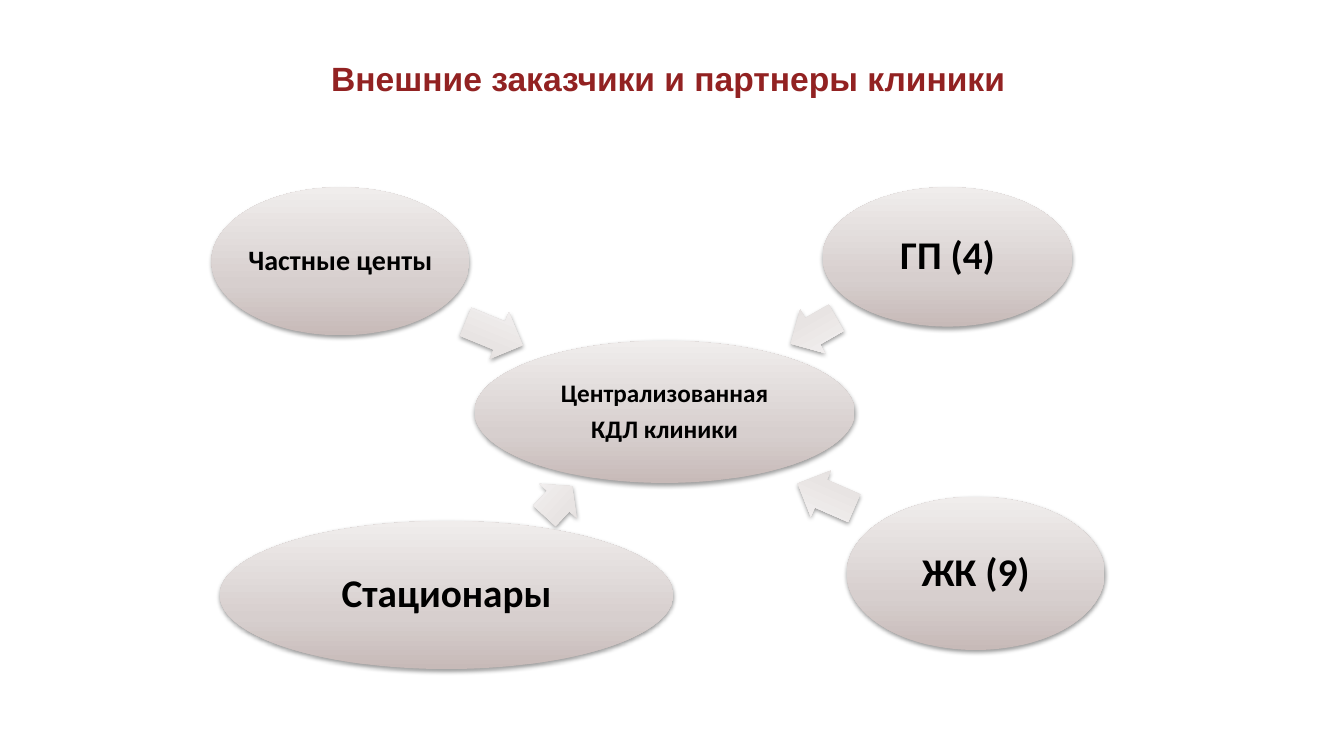
"""Builds a slide of external clients and partners around a central laboratory."""
from copy import deepcopy
from dataclasses import dataclass

from lxml import etree
from pptx import Presentation
from pptx.dml.color import RGBColor
from pptx.enum.shapes import MSO_SHAPE
from pptx.enum.text import MSO_ANCHOR, PP_ALIGN
from pptx.oxml.ns import qn
from pptx.util import Cm, Pt

OVAL_STOPS = ("C7BAB8", "D7CFCE", "F0EDEC")
ARROW_STOPS = ("E0D9D8", "E8E4E3", "F6F4F4")
STOP_POSITIONS = (0, 0.35, 1)
ARROW_HEIGHT = 1.27


@dataclass
class Oval:
    """An ellipse with its text, in centimetres and points."""
    text: str
    x: float
    y: float
    w: float
    h: float
    size: int = 28


@dataclass
class Arrow:
    """A block arrow towards the centre, in centimetres and degrees."""
    x: float
    y: float
    w: float
    angle: float


OVALS = (
    Oval("Централизованная\nКДЛ клиники", 11.96, 8.59, 9.58, 3.58, 18),
    Oval("ГП (4)", 20.73, 4.72, 6.3, 3.51),
    Oval("ЖК (9)", 21.34, 12.52, 6.5, 3.86),
    Oval("Стационары", 5.54, 13.13, 11.43, 3.73),
    Oval("Частные центы", 5.33, 4.72, 6.5, 3.73, 20),
)
ARROWS = (
    Arrow(19.84, 7.7, 1.32, 150.4),
    Arrow(20.04, 11.86, 1.55, 203.6),
    Arrow(13.56, 11.99, 1.02, 312.8),
    Arrow(11.68, 7.77, 1.55, 22.3),
)


def rgb(color: str) -> RGBColor:
    """Returns the colour of a hex string."""
    return RGBColor.from_string(color)


def write(sp, text: str, *, size: int, font: str, color: str = "000000",
          spacing: float = 1, after: float = 0, wrap: bool = False) -> None:
    """Writes bold centred text, one paragraph a line."""
    tf = sp.text_frame
    tf.word_wrap = wrap
    tf.vertical_anchor = MSO_ANCHOR.MIDDLE
    tf.margin_left = tf.margin_right = tf.margin_top = tf.margin_bottom = Cm(0.1)
    for i, line in enumerate(text.split("\n")):
        p = tf.add_paragraph() if i else tf.paragraphs[0]
        p.alignment = PP_ALIGN.CENTER
        p.line_spacing = spacing
        p.space_after = Pt(after)
        r = p.add_run()
        r.text = line
        r.font.name, r.font.size, r.font.bold = font, Pt(size), True
        r.font.color.rgb = rgb(color)


def add_shadow(sp) -> None:
    """Adds a soft shadow below the shape."""
    sp.shadow.inherit = False
    effects = sp._element.spPr.find(qn("a:effectLst"))
    shadow = etree.SubElement(effects, qn("a:outerShdw"), blurRad="40000",
                              dist="20000", dir="5400000", rotWithShape="0")
    black = etree.SubElement(shadow, qn("a:srgbClr"), val="000000")
    etree.SubElement(black, qn("a:alpha"), val="38000")


def add_gradient_shape(s, kind: MSO_SHAPE, x: float, y: float, w: float,
                       h: float, stops: tuple[str, ...]):
    """Adds a shape that gets lighter towards its top."""
    sp = s.shapes.add_shape(kind, Cm(x), Cm(y), Cm(w), Cm(h))
    sp.fill.gradient()
    sp.fill.gradient_angle = 90
    gs_list = next(sp._element.spPr.iter(qn("a:gsLst")))
    gs_list.append(deepcopy(gs_list[0]))
    for stop, position, color in zip(sp.fill.gradient_stops, STOP_POSITIONS, stops):
        stop.position = position
        stop.color.rgb = rgb(color)
    sp.line.fill.background()
    add_shadow(sp)
    return sp


def add_oval(s, oval: Oval) -> None:
    """Draws an ellipse with its text."""
    sp = add_gradient_shape(s, MSO_SHAPE.OVAL, oval.x, oval.y, oval.w, oval.h, OVAL_STOPS)
    write(sp, oval.text, size=oval.size, font="Calibri", spacing=0.9, after=oval.size * 0.35)


def add_arrow(s, arrow: Arrow) -> None:
    """Draws a turned block arrow."""
    sp = add_gradient_shape(s, MSO_SHAPE.RIGHT_ARROW, arrow.x, arrow.y, arrow.w,
                            ARROW_HEIGHT, ARROW_STOPS)
    sp.adjustments[0], sp.adjustments[1] = 0.6, 0.5
    sp.rotation = arrow.angle


def main() -> None:
    """Builds and saves the slide."""
    prs = Presentation()
    prs.slide_width, prs.slide_height = Cm(33.87), Cm(19.05)
    s = prs.slides.add_slide(prs.slide_layouts[6])
    title = s.shapes.add_textbox(Cm(4.29), Cm(1.44), Cm(25.1), Cm(1.07))
    write(title, "Внешние заказчики и партнеры клиники", size=24, font="Arial",
          color="922222", wrap=True)
    for arrow in ARROWS:
        add_arrow(s, arrow)
    for oval in OVALS:
        add_oval(s, oval)
    prs.save("out.pptx")


if __name__ == "__main__":
    main()
